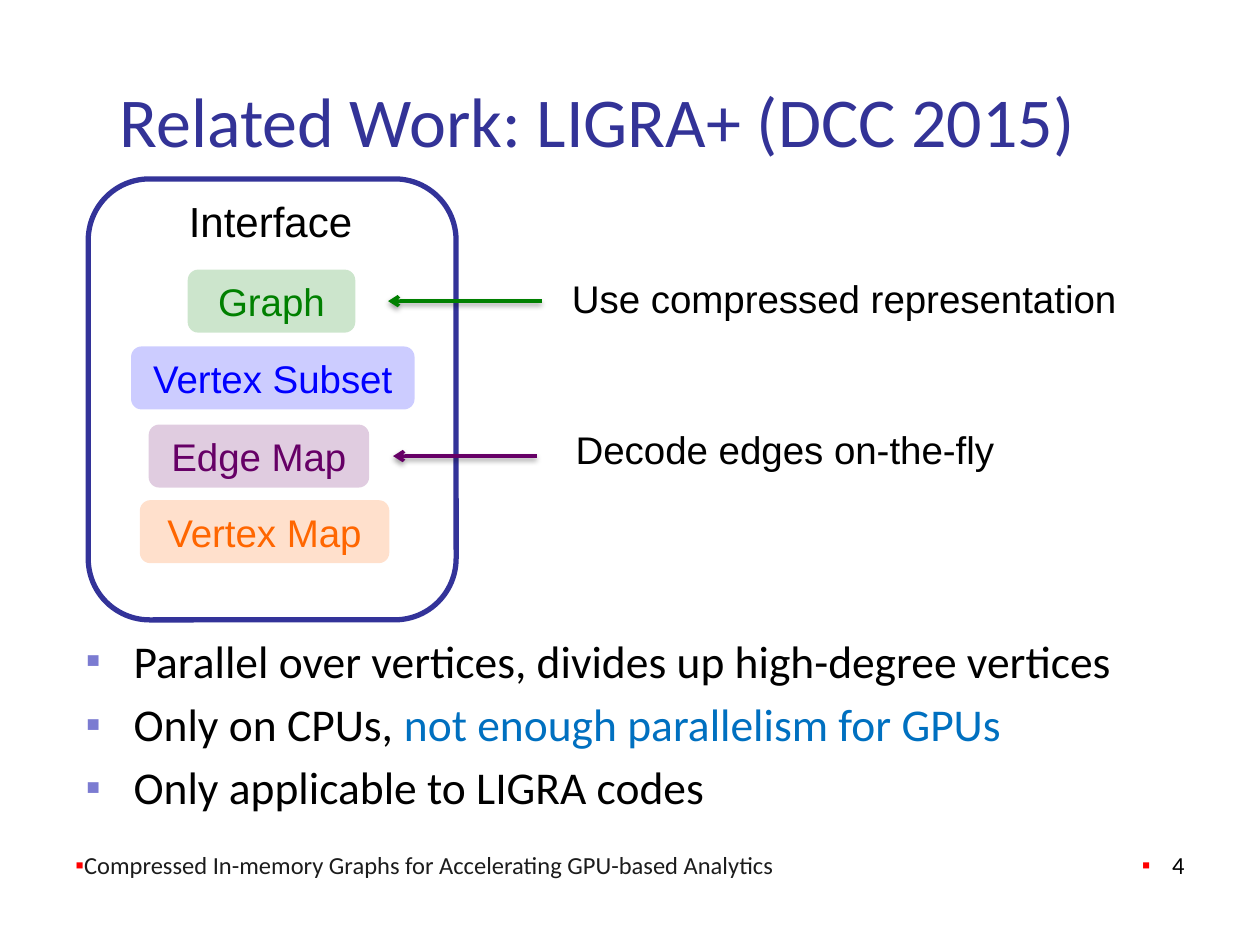
"""Build the Related Work slide on LIGRA+."""
import pptx
import pptx.dml.color
import pptx.enum.shapes
import pptx.enum.text
import pptx.oxml
import pptx.oxml.ns
import pptx.util
from lxml import etree

Inches = pptx.util.Inches
Pt = pptx.util.Pt
ALIGN = pptx.enum.text.PP_ALIGN
ANCHOR = pptx.enum.text.MSO_ANCHOR
SHAPE = pptx.enum.shapes.MSO_SHAPE
COLORS = {
    "title": "333397", "frame": "333399", "text": "000000", "accent": "0070C0",
    "bullet": "7B7BD1", "graph": "008000", "subset": "0000FF",
    "edge": "660066", "vertex": "FF6600", "footer": "1C1C1C", "mark": "FF0000",
}


class SlideBuilder:
    def __init__(self, slide, colors):
        self.slide = slide
        self.colors = colors

    def rgb(self, name):
        return pptx.dml.color.RGBColor.from_string(self.colors[name])

    def place(self, shape, left, top, width, height):
        shape.left, shape.top = Inches(left), Inches(top)
        shape.width, shape.height = Inches(width), Inches(height)

    def style(self, span, size, color, font):
        span.font.size = Pt(size)
        span.font.name = font
        span.font.color.rgb = self.rgb(color)

    def child(self, parent, tag, **attributes):
        return etree.SubElement(parent, pptx.oxml.ns.qn(tag), **attributes)

    def bullet(self, para, color, percent, indent):
        props = para._p.get_or_add_pPr()
        props.set("marL", str(Inches(indent)))
        props.set("indent", str(-Inches(indent)))
        self.child(self.child(props, "a:buClr"), "a:srgbClr", val=self.colors[color])
        self.child(props, "a:buSzPct", val=str(percent * 1000))
        self.child(props, "a:buFont", typeface="Arial")
        self.child(props, "a:buChar", char="▪")

    def title(self, text, bounds):
        box = self.slide.shapes.title
        self.place(box, *bounds)
        frame = box.text_frame
        frame.text = text
        frame.auto_size = pptx.enum.text.MSO_AUTO_SIZE.NONE
        frame.vertical_anchor = ANCHOR.MIDDLE
        frame.margin_left = Inches(0.45)
        para = frame.paragraphs[0]
        para.alignment = ALIGN.LEFT
        self.style(para.runs[0], 40, "title", "Calibri")

    def body(self, items, bounds):
        box = self.slide.placeholders[1]
        self.place(box, *bounds)
        frame = box.text_frame
        frame.auto_size = pptx.enum.text.MSO_AUTO_SIZE.NONE
        for index, pieces in enumerate(items):
            para = frame.add_paragraph() if index else frame.paragraphs[0]
            para.space_before = Pt(5 if index else 0)
            self.bullet(para, "bullet", 95, 0.38)
            for text, color in pieces:
                span = para.add_run()
                span.text = text
                self.style(span, 26, color, "Calibri")

    def frame(self, bounds):
        box = self.slide.shapes.add_shape(SHAPE.ROUNDED_RECTANGLE, *map(Inches, bounds))
        box.shadow.inherit = False
        box.fill.background()
        box.line.color.rgb = self.rgb("frame")
        box.line.width = Pt(3)

    def tile(self, text, color, bounds):
        box = self.slide.shapes.add_shape(SHAPE.ROUNDED_RECTANGLE, *map(Inches, bounds))
        box.shadow.inherit = False
        box.fill.solid()
        box.fill.fore_color.rgb = self.rgb(color)
        tint = box._element.spPr.find(".//" + pptx.oxml.ns.qn("a:srgbClr"))
        self.child(tint, "a:alpha", val="20000")
        box.line.fill.background()
        frame = box.text_frame
        frame.text = text
        frame.word_wrap = True
        frame.vertical_anchor = ANCHOR.MIDDLE
        para = frame.paragraphs[0]
        para.alignment = ALIGN.CENTER
        self.style(para.runs[0], 22, color, "Arial")

    def label(self, text, size, bounds):
        box = self.slide.shapes.add_textbox(*map(Inches, bounds))
        frame = box.text_frame
        frame.text = text
        frame.word_wrap = False
        frame.auto_size = pptx.enum.text.MSO_AUTO_SIZE.SHAPE_TO_FIT_TEXT
        self.style(frame.paragraphs[0].runs[0], size, "text", "Arial")

    def arrow(self, start, end, y, color):
        line = self.slide.shapes.add_connector(
            pptx.enum.shapes.MSO_CONNECTOR.STRAIGHT,
            Inches(start), Inches(y), Inches(end), Inches(y))
        line.line.color.rgb = self.rgb(color)
        line.line.width = Pt(2)
        self.child(line.line._get_or_add_ln(), "a:tailEnd", type="arrow")
        effects = self.child(line._element.spPr, "a:effectLst")
        shadow = self.child(effects, "a:outerShdw", blurRad=str(Pt(3.1)),
                            dist=str(Pt(1.6)), dir="5400000", rotWithShape="0")
        shade = self.child(shadow, "a:srgbClr", val=self.colors["text"])
        self.child(shade, "a:alpha", val="38000")

    def footer(self, text, color, align, indent, bounds):
        box = self.slide.shapes.add_textbox(*map(Inches, bounds))
        frame = box.text_frame
        frame.text = text
        frame.word_wrap = True
        frame.vertical_anchor = ANCHOR.BOTTOM
        para = frame.paragraphs[0]
        para.alignment = align
        self.bullet(para, "mark", 100, indent)
        self.style(para.runs[0], 14, color, "Calibri")


def main():
    deck = pptx.Presentation()
    deck.slide_width, deck.slide_height = Inches(10), Inches(7.5)
    page = SlideBuilder(deck.slides.add_slide(deck.slide_layouts[1]), COLORS)
    page.title("Related Work: LIGRA+ (DCC 2015)", (0.5, 0.6, 9, 0.7))
    page.body([
        [("Parallel over vertices, divides up high-degree vertices", "text")],
        [("Only on CPUs, ", "text"), ("not enough parallelism for GPUs", "accent")],
        [("Only applicable to LIGRA codes", "text")],
    ], (0.58, 4.97, 9.17, 1.48))
    for text, color, left, top, width in [
        ("Graph", "graph", 1.49, 2.14, 1.33),
        ("Vertex Subset", "subset", 1.04, 2.75, 2.25),
        ("Edge Map", "edge", 1.18, 3.37, 1.75),
        ("Vertex Map", "vertex", 1.11, 3.97, 1.98),
    ]:
        page.tile(text, color, (left, top, width, 0.5))
    page.frame((0.7, 1.42, 2.92, 3.5))
    page.label("Interface", 24, (1.4, 1.5, 1.51, 0.5))
    page.arrow(4.3, 3.08, 2.39, "graph")
    page.arrow(4.26, 3.12, 3.62, "edge")
    page.label("Use compressed representation", 22, (4.44, 2.13, 4.71, 0.47))
    page.label("Decode edges on-the-fly", 22, (4.47, 3.33, 3.69, 0.47))
    page.footer("Compressed In-memory Graphs for Accelerating GPU-based Analytics",
                "footer", ALIGN.LEFT, 0, (0.5, 6.53, 5.92, 0.5))
    page.footer("4", "text", ALIGN.RIGHT, 0.24, (7.42, 6.53, 2.08, 0.5))
    deck.save("out.pptx")


if __name__ == "__main__":
    main()
